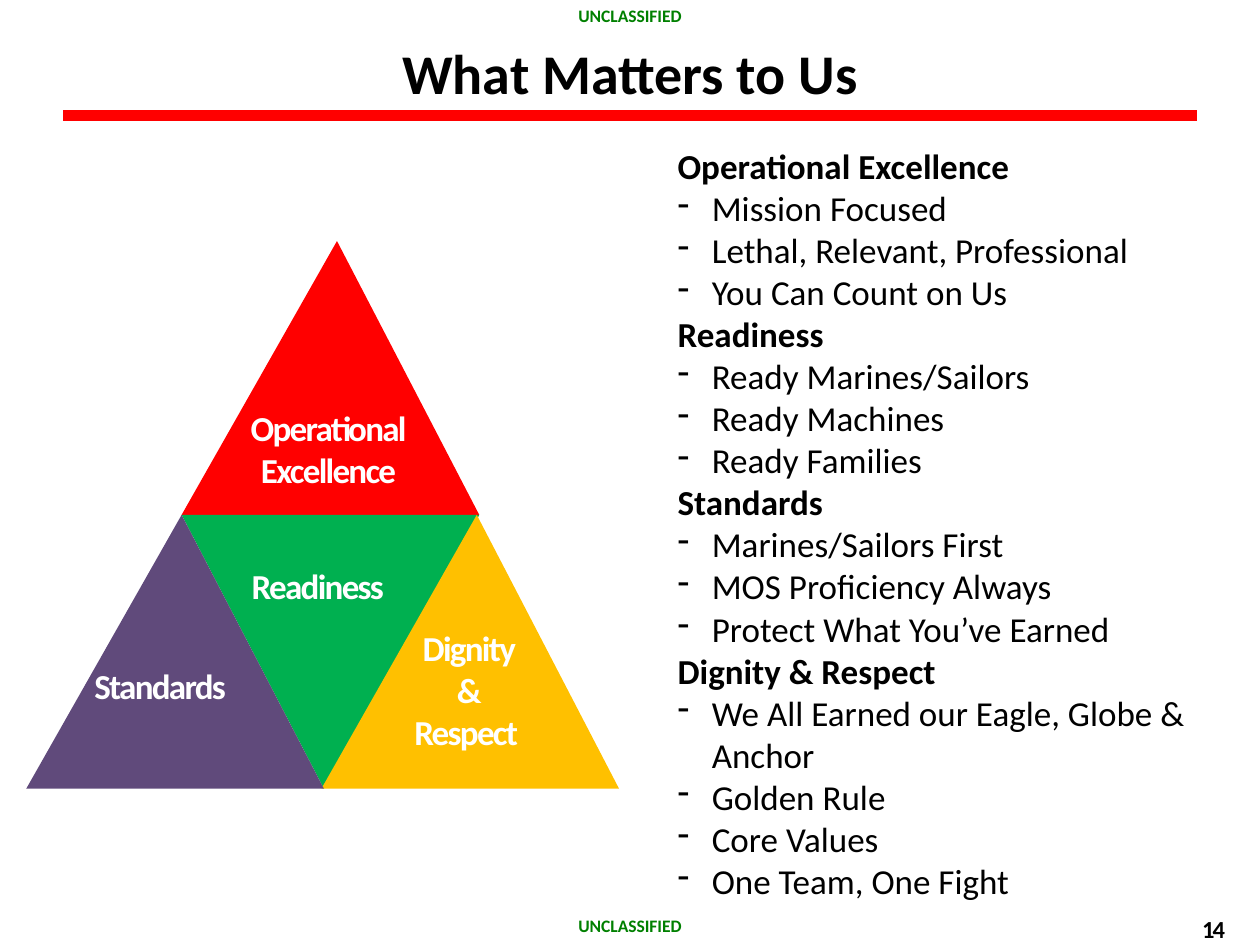
from dataclasses import dataclass

from lxml.etree import SubElement
from pptx import Presentation
from pptx.dml.color import RGBColor
from pptx.enum.shapes import MSO_CONNECTOR, MSO_SHAPE
from pptx.enum.text import MSO_AUTO_SIZE, PP_ALIGN
from pptx.oxml.ns import qn
from pptx.util import Cm, Pt


@dataclass(frozen=True)
class Theme:
    font: str = "Calibri"
    black: str = "000000"
    white: str = "FFFFFF"
    marking: str = "008000"
    red: str = "FF0000"
    green: str = "00B050"
    gold: str = "FFC000"
    purple: str = "604A7B"
    title_size: int = 32
    body_size: int = 20
    number_size: int = 14
    marking_size: int = 10
    rule_width: int = 6


THEME = Theme()

TITLE = "What Matters to Us"
MARKING = "UNCLASSIFIED"
SLIDE_NUMBER = "14"
VALUES = {
    "Operational Excellence": [
        "Mission Focused", "Lethal, Relevant, Professional", "You Can Count on Us",
    ],
    "Readiness": ["Ready Marines/Sailors", "Ready Machines", "Ready Families"],
    "Standards": [
        "Marines/Sailors First", "MOS Proficiency Always", "Protect What You’ve Earned",
    ],
    "Dignity & Respect": [
        "We All Earned our Eagle, Globe & Anchor", "Golden Rule", "Core Values",
        "One Team, One Fight",
    ],
}
# Label lines, fill, column, row, rotation, label box (left, top, width, height in cm)
TRIANGLES = [
    (["Operational ", "Excellence "], THEME.red, "middle", 0, 0, (4.88, 8.2, 3.61, 1.7)),
    (["Readiness "], THEME.green, "middle", 1, 180, (4.88, 11.38, 3.18, 0.86)),
    (["Dignity", "&", "Respect "], THEME.gold, "right", 1, 0, (7.87, 12.62, 3.18, 2.57)),
    (["Standards "], THEME.purple, "left", 1, 0, (1.7, 13.39, 3.18, 0.86)),
]

SLIDE_WIDTH, SLIDE_HEIGHT = 25.4, 19.05
RULE_MARGIN, RULE_TOP = 1.27, 2.33
PYRAMID_LEFT, PYRAMID_TOP = 0.53, 4.86
TRIANGLE_WIDTH, TRIANGLE_HEIGHT, APEX = 6.0, 5.52, 0.522
COLUMNS = {
    "left": PYRAMID_LEFT,
    "middle": PYRAMID_LEFT + APEX * TRIANGLE_WIDTH,
    "right": PYRAMID_LEFT + TRIANGLE_WIDTH - 0.05,
}
MARKING_WIDTH, MARKING_HEIGHT = 4.42, 0.73
BULLET_INDENT = 0.69


def add_text_box(shapes, box, insets=(0.25, 0.13), grow=False):
    shape = shapes.add_textbox(*(Cm(length) for length in box))
    frame = shape.text_frame
    frame.word_wrap = True
    frame.auto_size = MSO_AUTO_SIZE.SHAPE_TO_FIT_TEXT if grow else MSO_AUTO_SIZE.NONE
    frame.margin_left = frame.margin_right = Cm(insets[0])
    frame.margin_top = frame.margin_bottom = Cm(insets[1])
    return frame


def add_line(frame, text, size, color, bold=True, align=PP_ALIGN.CENTER,
             spacing=None, bullet=False):
    """Write one paragraph; spacing is the letter spacing in points."""
    first = frame.paragraphs[0]
    paragraph = frame.add_paragraph() if first.runs else first
    paragraph.alignment = align
    if bullet:
        properties = paragraph._p.get_or_add_pPr()
        properties.set("marL", str(Cm(BULLET_INDENT)))
        properties.set("indent", str(-Cm(BULLET_INDENT)))
        SubElement(properties, qn("a:buChar")).set("char", "-")
    run = paragraph.add_run()
    run.text = text
    run.font.name = THEME.font
    run.font.size = Pt(size)
    run.font.bold = bold
    run.font.color.rgb = RGBColor.from_string(color)
    if spacing is not None:
        run._r.get_or_add_rPr().set("spc", str(round(spacing * 100)))


def add_rule(slide):
    rule = slide.shapes.add_connector(
        MSO_CONNECTOR.STRAIGHT, Cm(RULE_MARGIN), Cm(RULE_TOP),
        Cm(SLIDE_WIDTH - RULE_MARGIN), Cm(RULE_TOP))
    rule.line.color.rgb = RGBColor.from_string(THEME.red)
    rule.line.width = Pt(THEME.rule_width)
    SubElement(rule._element.spPr, qn("a:effectLst"))


def add_values(slide):
    frame = add_text_box(slide.shapes, (13.41, 2.79, 11.63, 15.6), grow=True)
    for heading, points in VALUES.items():
        add_line(frame, heading, THEME.body_size, THEME.black, align=PP_ALIGN.LEFT)
        for point in points:
            add_line(frame, point, THEME.body_size, THEME.black, bold=False,
                     align=PP_ALIGN.LEFT, bullet=True)


def add_markings(slide):
    left = (SLIDE_WIDTH - MARKING_WIDTH) / 2
    for top in (SLIDE_HEIGHT - MARKING_HEIGHT, -0.02):
        frame = add_text_box(slide.shapes, (left, top, MARKING_WIDTH, MARKING_HEIGHT))
        add_line(frame, MARKING, THEME.marking_size, THEME.marking)


def add_pyramid(slide):
    shapes = slide.shapes.add_group_shape().shapes
    for lines, fill, column, row, rotation, label_box in TRIANGLES:
        triangle = shapes.add_shape(
            MSO_SHAPE.ISOSCELES_TRIANGLE, Cm(COLUMNS[column]),
            Cm(PYRAMID_TOP + row * TRIANGLE_HEIGHT),
            Cm(TRIANGLE_WIDTH), Cm(TRIANGLE_HEIGHT))
        triangle.adjustments[0] = APEX
        triangle.rotation = rotation
        triangle.shadow.inherit = False
        triangle.fill.solid()
        triangle.fill.fore_color.rgb = RGBColor.from_string(fill)
        triangle.line.fill.background()
        frame = add_text_box(shapes, label_box, insets=(0, 0), grow=True)
        for line in lines:
            add_line(frame, line, THEME.body_size, THEME.white, spacing=-1)


def main():
    presentation = Presentation()
    presentation.slide_width = Cm(SLIDE_WIDTH)
    presentation.slide_height = Cm(SLIDE_HEIGHT)
    slide = presentation.slides.add_slide(presentation.slide_layouts[6])

    add_rule(slide)
    add_values(slide)
    add_markings(slide)
    add_pyramid(slide)
    title = add_text_box(slide.shapes, (0, 0.64, SLIDE_WIDTH, 2.74))
    add_line(title, TITLE, THEME.title_size, THEME.black)
    number = add_text_box(slide.shapes, (23.93, 18.42, 1.07, 0.61), insets=(0, 0), grow=True)
    add_line(number, SLIDE_NUMBER, THEME.number_size, THEME.black, spacing=-1.1)

    presentation.save("out.pptx")


if __name__ == "__main__":
    main()
